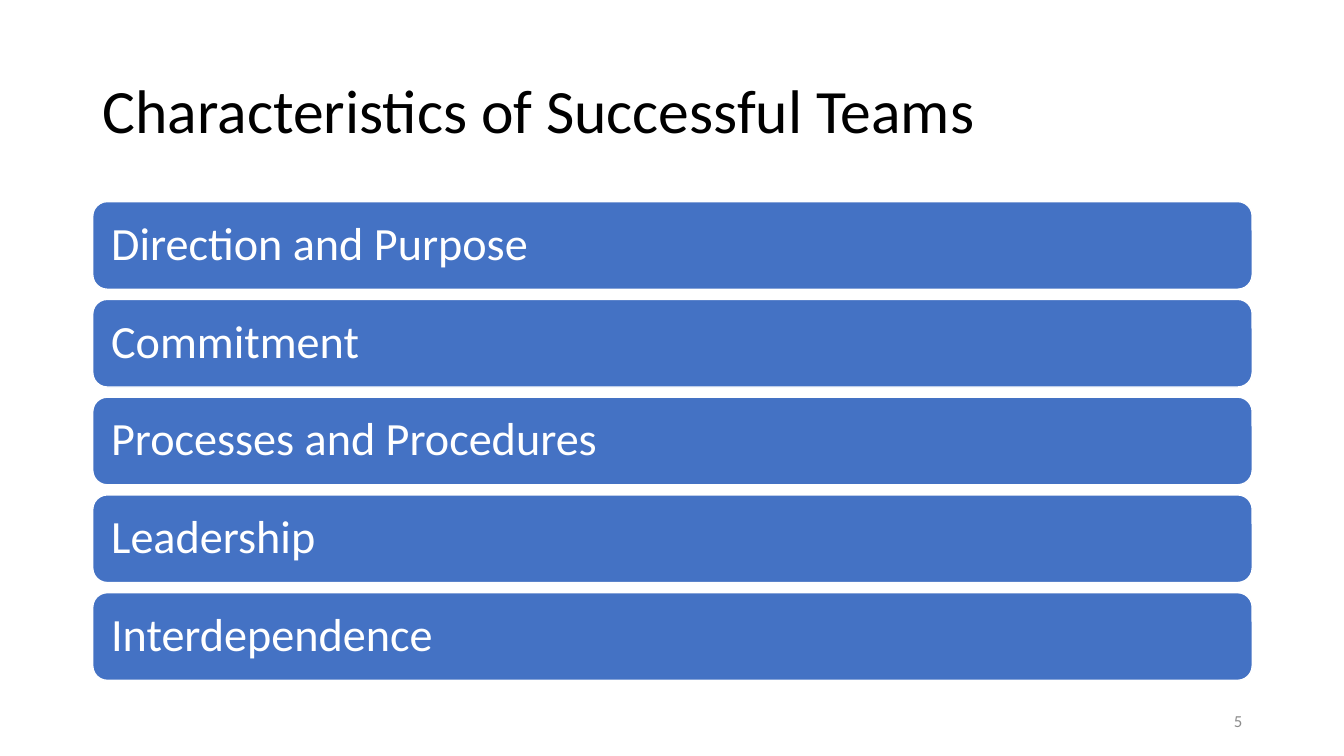
from pptx import Presentation
from pptx import util as u
from pptx.dml.color import RGBColor
from pptx.enum import shapes, text

BLACK = RGBColor(0x00, 0x00, 0x00)
WHITE = RGBColor(0xFF, 0xFF, 0xFF)
BLUE = RGBColor(0x44, 0x72, 0xC4)
GRAY = RGBColor(0x8C, 0x8C, 0x8C)

FONT = "Calibri"
LEFT, WIDTH = 0.92, 11.5
BAR_TOP, BAR_HEIGHT, BAR_STEP = 2, 0.87, 0.97
BAR_INSET = u.Inches(0.14)

CHARACTERISTICS = [
    "Direction and Purpose",
    "Commitment",
    "Processes and Procedures",
    "Leadership",
    "Interdependence",
]


def set_attributes(target, values):
    for name, value in values.items():
        setattr(target, name, value)


def write_text(shape, wording, size, color, align=text.PP_ALIGN.LEFT,
               line_spacing=0.9, **frame_values):
    """Fill a shape with one vertically centred paragraph."""
    frame = shape.text_frame
    set_attributes(frame, {"word_wrap": True,
                           "vertical_anchor": text.MSO_ANCHOR.MIDDLE,
                           **frame_values})
    paragraph = frame.paragraphs[0]
    set_attributes(paragraph, {"text": wording, "alignment": align,
                               "line_spacing": line_spacing})
    set_attributes(paragraph.font, {"name": FONT, "size": u.Pt(size)})
    paragraph.font.color.rgb = color


def add_label(slide, box, wording, size, color, **values):
    shape = slide.shapes.add_textbox(*map(u.Inches, box))
    write_text(shape, wording, size, color, **values)


def add_bar(slide, top, wording):
    shape = slide.shapes.add_shape(
        shapes.MSO_SHAPE.ROUNDED_RECTANGLE,
        *map(u.Inches, (LEFT, top, WIDTH, BAR_HEIGHT)))
    shape.shadow.inherit = False
    shape.fill.solid()
    shape.fill.fore_color.rgb = BLUE
    shape.line.color.rgb = WHITE
    shape.line.width = u.Pt(1)
    write_text(shape, wording, 33, WHITE,
               margin_left=BAR_INSET, margin_right=BAR_INSET,
               margin_top=BAR_INSET, margin_bottom=BAR_INSET)


def main():
    presentation = Presentation()
    presentation.slide_width = u.Inches(13.33)
    presentation.slide_height = u.Inches(7.5)
    slide = presentation.slides.add_slide(presentation.slide_layouts[6])

    # Title
    add_label(slide, (LEFT, 0.4, WIDTH, 1.45),
              "Characteristics of Successful Teams", 44, BLACK)

    # Stack of characteristics
    for index, wording in enumerate(CHARACTERISTICS):
        add_bar(slide, BAR_TOP + index * BAR_STEP, wording)

    # Slide number
    add_label(slide, (9.42, 6.95, 3, 0.4), "5", 12, GRAY,
              align=text.PP_ALIGN.RIGHT, line_spacing=1.0)

    presentation.save("out.pptx")


if __name__ == "__main__":
    main()
